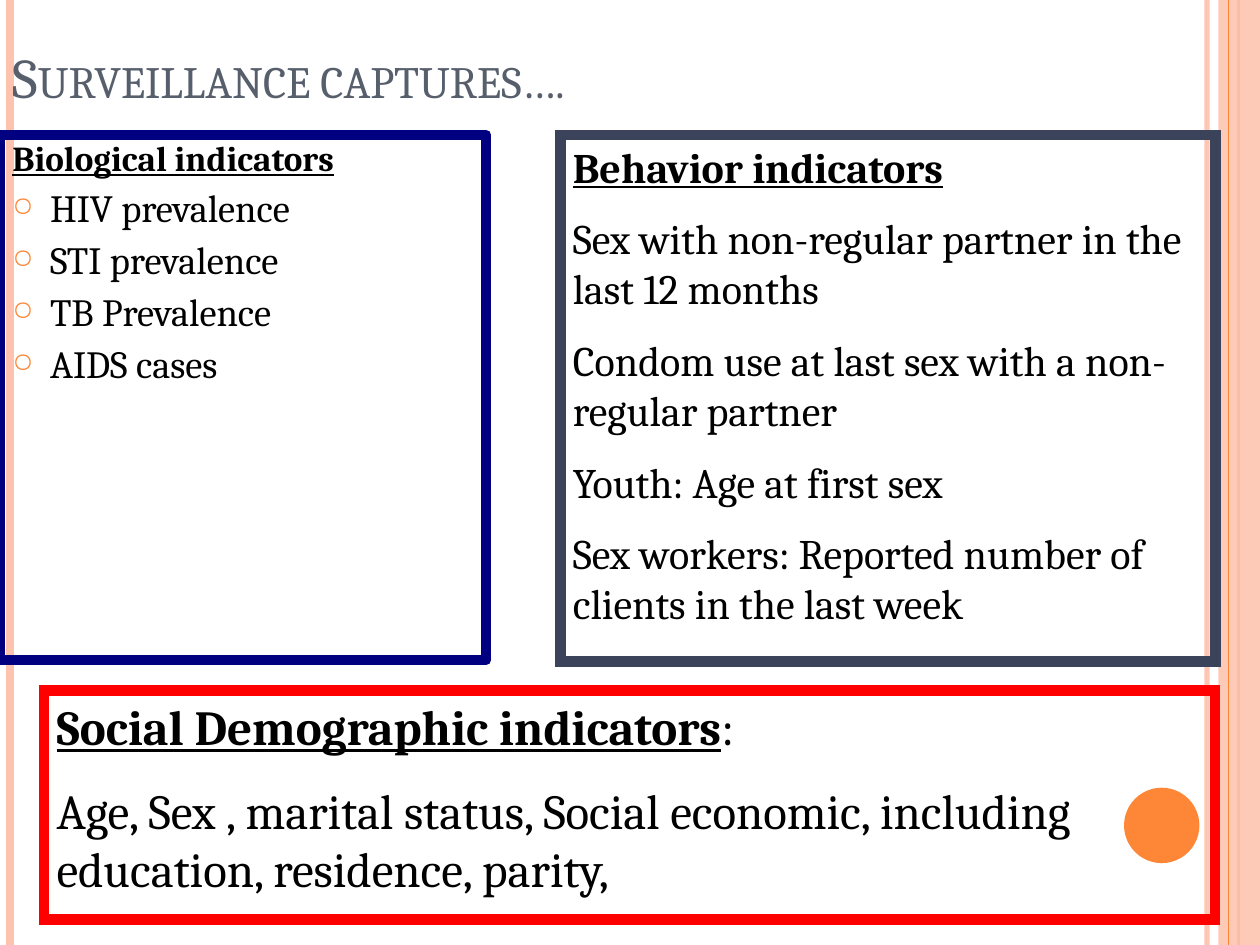
import pptx
import pptx.dml.color
import pptx.enum.shapes
import pptx.enum.text
import pptx.oxml.ns
import pptx.util
from lxml import etree

Cm, Pt = pptx.util.Cm, pptx.util.Pt
qn = pptx.oxml.ns.qn
SHAPE = pptx.enum.shapes.MSO_SHAPE
TEXT = pptx.enum.text

WIDE, HIGH = 25.4, 19.05
FONT = "Cambria"
HUES = {
    "peach": "FEC3AE", "orange": "FE8637", "slate": "575F6D",
    "navy": "000080", "steel": "3B435B", "red": "FF0000", "ink": "000000",
}


class Deck:
    def __init__(self):
        self.file = pptx.Presentation()
        self.file.slide_width, self.file.slide_height = Cm(WIDE), Cm(HIGH)
        self.page = self.file.slides.add_slide(self.file.slide_layouts[5])

    def hue(self, name):
        return pptx.dml.color.RGBColor.from_string(HUES[name])

    def paint(self, fill, name, alpha=100):
        fill.solid()
        fill.fore_color.rgb = self.hue(name)
        if alpha < 100:
            tint = next(fill._xPr.iter(qn("a:srgbClr")))
            etree.SubElement(tint, qn("a:alpha")).set("val", str(alpha * 1000))

    def style(self, font, size, name="ink", bold=None):
        font.name, font.size, font.bold = FONT, Pt(size), bold
        font.color.rgb = self.hue(name)

    def stripe(self, x, name, width, alpha=100):
        """Draw a line down the full height of the slide."""
        line = self.page.shapes.add_connector(
            pptx.enum.shapes.MSO_CONNECTOR.STRAIGHT, Cm(x), 0, Cm(x), Cm(HIGH))
        line.line.width = Pt(width)
        self.paint(line.line.fill, name, alpha)
        etree.SubElement(line._element.spPr, qn("a:effectLst"))

    def shape(self, kind, x, y, w, h, name, alpha=100):
        item = self.page.shapes.add_shape(kind, Cm(x), Cm(y), Cm(w), Cm(h))
        item.shadow.inherit = False
        self.paint(item.fill, name, alpha)
        item.line.fill.background()

    def title(self, text, x, y, w, h):
        item = self.page.shapes.title
        item.left, item.top, item.width, item.height = Cm(x), Cm(y), Cm(w), Cm(h)
        frame = item.text_frame
        frame.text = text
        frame.auto_size = TEXT.MSO_AUTO_SIZE.NONE
        frame.vertical_anchor = TEXT.MSO_ANCHOR.BOTTOM
        para = frame.paragraphs[0]
        para.alignment = TEXT.PP_ALIGN.LEFT
        self.style(para.font, 32, "slate")
        para.runs[0].font._element.set("cap", "small")
        # Keep the title in front of the stripes
        self.page.shapes._spTree.append(item._element)

    def panel(self, x, y, w, h, name, join="miter"):
        """Add an outlined text box and return its text frame."""
        box = self.page.shapes.add_textbox(Cm(x), Cm(y), Cm(w), Cm(h))
        box.line.width = Pt(6)
        box.line.color.rgb = self.hue(name)
        etree.SubElement(box.line._ln, qn("a:" + join))
        box.text_frame.word_wrap = True
        return box.text_frame

    def head(self, frame, text, size, tail=""):
        para = frame.paragraphs[0]
        self.style(para.font, size)
        run = para.add_run()
        run.text = text
        run.font.bold = run.font.underline = True
        if tail:
            para.add_run().text = tail
        return para

    def body(self, frame, text, size, gap):
        para = frame.add_paragraph()
        para.text = text
        para.space_before = Pt(gap)
        self.style(para.font, size)
        return para

    def bullet(self, para):
        props = para._p.get_or_add_pPr()
        props.set("marL", str(Cm(0.76)))
        props.set("indent", str(-Cm(0.76)))
        tint = etree.Element(qn("a:buClr"))
        etree.SubElement(tint, qn("a:srgbClr")).set("val", HUES["orange"])
        size = etree.Element(qn("a:buSzPct"))
        size.set("val", "70000")
        mark = etree.Element(qn("a:buChar"))
        mark.set("char", "○")
        rest = props.find(qn("a:defRPr"))
        for part in (tint, size, mark):
            rest.addprevious(part)


def main():
    deck = Deck()
    deck.stripe(24.33, "peach", 3, 93)
    deck.stripe(0.2, "peach", 4.5)
    deck.stripe(24.97, "orange", 1.5)
    deck.shape(SHAPE.RECTANGLE, 24.56, 0, 0.84, HIGH, "peach", 87)
    deck.stripe(24.77, "orange", 0.75)
    deck.shape(SHAPE.OVAL, 22.66, 15.88, 1.52, 1.52, "orange")
    deck.title("Surveillance captures….", 0, 0.53, 22.86, 1.8)

    frame = deck.panel(0, 2.72, 9.8, 10.59, "navy", "round")
    deck.head(frame, "Biological indicators", 20).line_spacing = 0.9
    for text in ("HIV prevalence", "STI prevalence", "TB Prevalence", "AIDS cases"):
        para = deck.body(frame, text, 22, 6)
        para.line_spacing = 0.9
        deck.bullet(para)

    frame = deck.panel(11.3, 2.72, 13.21, 10.62, "steel")
    deck.head(frame, "Behavior indicators", 24)
    for text in (
        "Sex with non-regular partner in the last 12 months",
        "Condom use at last sex with a non-regular partner",
        "Youth: Age at first sex",
        "Sex workers: Reported number of clients in the last week",
    ):
        deck.body(frame, text, 24, 12)

    frame = deck.panel(0.89, 13.92, 23.6, 4.62, "red")
    deck.head(frame, "Social Demographic indicators", 28, ":")
    deck.body(frame, "Age, Sex , marital status, Social economic, including "
              "education, residence, parity,", 28, 14)
    deck.file.save("out.pptx")


if __name__ == "__main__":
    main()
